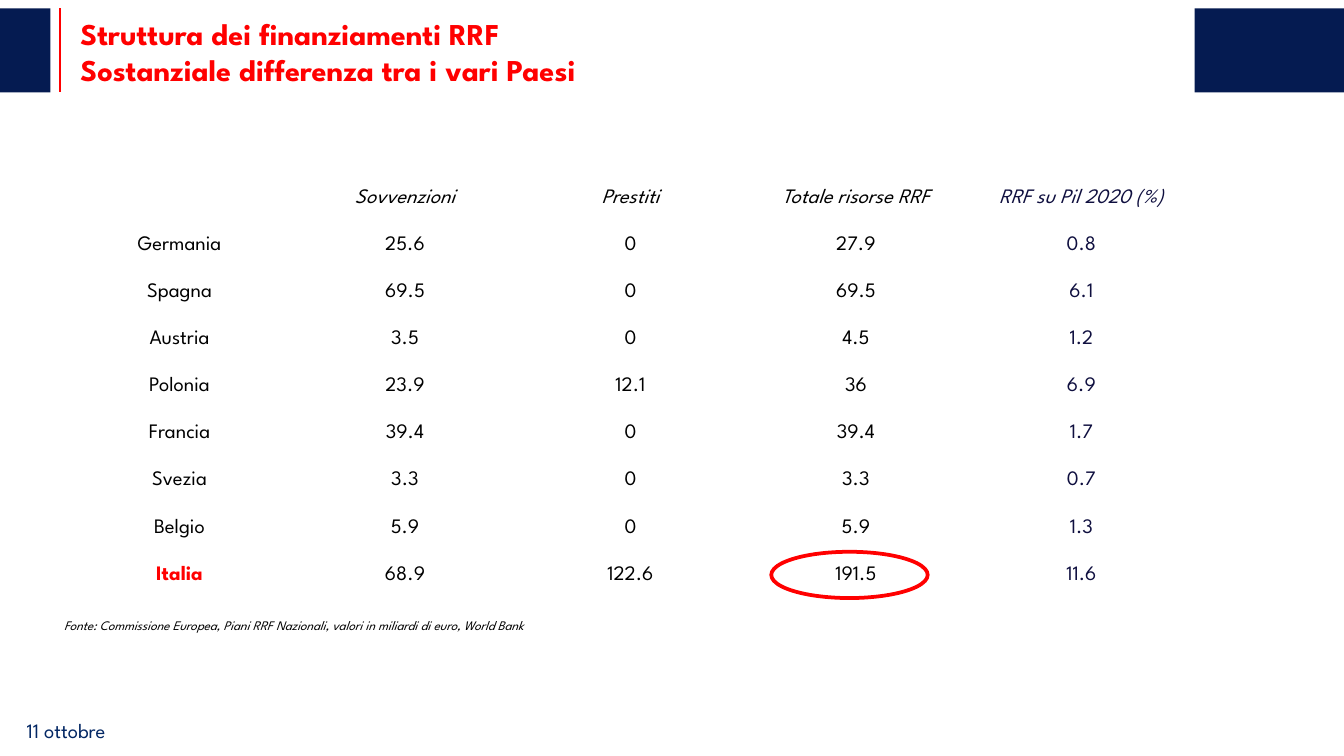
from dataclasses import dataclass

import pptx
import pptx.dml.color
import pptx.enum.shapes
import pptx.enum.text
import pptx.oxml.ns
import pptx.util
from lxml import etree

Pt = pptx.util.Pt
ANCHOR = pptx.enum.text.MSO_ANCHOR
SHAPE = pptx.enum.shapes.MSO_SHAPE
FONT = "League Spartan"
COLORS = {"navy": "051B51", "red": "FF0000", "date": "032764",
          "black": "000000", "ratio": "0F0F3F"}


@dataclass
class Box:
    left: float
    top: float
    width: float
    height: float

    def lengths(self) -> list:
        return [Pt(value) for value in (self.left, self.top, self.width, self.height)]


@dataclass
class Style:
    size: float
    color: str
    bold: bool = False
    italic: bool = False


@dataclass
class Label:
    text: str
    box: Box
    style: Style
    anchor: ANCHOR = ANCHOR.TOP


HEADERS = ("", "Sovvenzioni", "Prestiti", "Totale risorse RRF", "RRF su Pil 2020 (%)")
COUNTRIES = (
    ("Germania", "25.6", "0", "27.9", "0.8"),
    ("Spagna", "69.5", "0", "69.5", "6.1"),
    ("Austria", "3.5", "0", "4.5", "1.2"),
    ("Polonia", "23.9", "12.1", "36", "6.9"),
    ("Francia", "39.4", "0", "39.4", "1.7"),
    ("Svezia", "3.3", "0", "3.3", "0.7"),
    ("Belgio", "5.9", "0", "5.9", "1.3"),
    ("Italia", "68.9", "122.6", "191.5", "11.6"),
)
HEADER_BLOCKS = (Box(640, 4.5, 80, 45), Box(0, 4.5, 27, 45))
LABELS = (
    Label("Struttura dei finanziamenti RRF\vSostanziale differenza tra i vari Paesi",
          Box(36, 5.8, 582, 43.2), Style(16.2, "red", bold=True), ANCHOR.MIDDLE),
    Label("11 ottobre", Box(7.2, 381, 632, 24), Style(11, "date")),
    Label("Fonte: Commissione Europea, Piani RRF Nazionali, valori in miliardi di euro, World Bank",
          Box(27.2, 327, 311, 16), Style(7, "black", italic=True)),
)


def rgb(name: str) -> pptx.dml.color.RGBColor:
    return pptx.dml.color.RGBColor.from_string(COLORS[name])


def style_paragraph(paragraph, style: Style) -> None:
    font = paragraph.font
    font.name, font.size = FONT, Pt(style.size)
    font.bold, font.italic = style.bold, style.italic
    font.color.rgb = rgb(style.color)


def add_block(slide, box: Box) -> None:
    shape = slide.shapes.add_shape(SHAPE.RECTANGLE, *box.lengths())
    shape.shadow.inherit = False
    shape.fill.solid()
    shape.fill.fore_color.rgb = rgb("navy")
    shape.line.fill.background()


def add_rule(slide, x: float, top: float, bottom: float) -> None:
    rule = slide.shapes.add_connector(
        pptx.enum.shapes.MSO_CONNECTOR.STRAIGHT, Pt(x), Pt(top), Pt(x), Pt(bottom))
    rule.line.color.rgb = rgb("red")
    rule.line.width = Pt(1)
    etree.SubElement(rule._element.spPr, pptx.oxml.ns.qn("a:effectLst"))


def add_label(slide, label: Label) -> None:
    frame = slide.shapes.add_textbox(*label.box.lengths()).text_frame
    frame.word_wrap = True
    frame.vertical_anchor = label.anchor
    paragraph = frame.paragraphs[0]
    paragraph.text = label.text
    style_paragraph(paragraph, label.style)


def cell_style(row: int, column: int) -> Style:
    if COUNTRIES[row - 1][0] == "Italia" and row > 0 and column == 0:
        return Style(11, "red", bold=True)
    color = "ratio" if column == len(HEADERS) - 1 else "black"
    return Style(11, color, italic=row == 0)


def fill_cell(cell, text: str, style: Style) -> None:
    cell.fill.background()
    cell.vertical_anchor = ANCHOR.MIDDLE
    cell.margin_left = cell.margin_right = Pt(5)
    cell.margin_top = cell.margin_bottom = Pt(0)
    paragraph = cell.text_frame.paragraphs[0]
    paragraph.text = text
    paragraph.alignment = pptx.enum.text.PP_ALIGN.CENTER
    paragraph.line_spacing = 1.15
    paragraph.space_after = Pt(10)
    style_paragraph(paragraph, style)


def add_funding_table(slide, box: Box) -> None:
    rows = (HEADERS, *COUNTRIES)
    table = slide.shapes.add_table(len(rows), len(HEADERS), *box.lengths()).table
    table.first_row = table.horz_banding = False
    for column in table.columns:
        column.width = Pt(box.width / len(HEADERS))
    for row_index, values in enumerate(rows):
        table.rows[row_index].height = Pt(box.height / len(rows))
        for column_index, text in enumerate(values):
            fill_cell(table.cell(row_index, column_index), text,
                      cell_style(row_index, column_index))


def add_highlight(slide, box: Box) -> None:
    ellipse = slide.shapes.add_shape(SHAPE.OVAL, *box.lengths())
    ellipse.shadow.inherit = False
    ellipse.fill.background()
    ellipse.line.color.rgb = rgb("red")
    ellipse.line.width = Pt(2)


def main() -> None:
    presentation = pptx.Presentation()
    presentation.slide_width, presentation.slide_height = Pt(720), Pt(405)
    slide = presentation.slides.add_slide(presentation.slide_layouts[6])
    for box in HEADER_BLOCKS:
        add_block(slide, box)
    add_rule(slide, 32.2, 4.5, 49.5)
    for label in LABELS:
        add_label(slide, label)
    add_funding_table(slide, Box(35.8, 92.8, 604, 227.4))
    add_highlight(slide, Box(413.2, 295.6, 83.8, 24.8))
    presentation.save("out.pptx")


if __name__ == "__main__":
    main()
